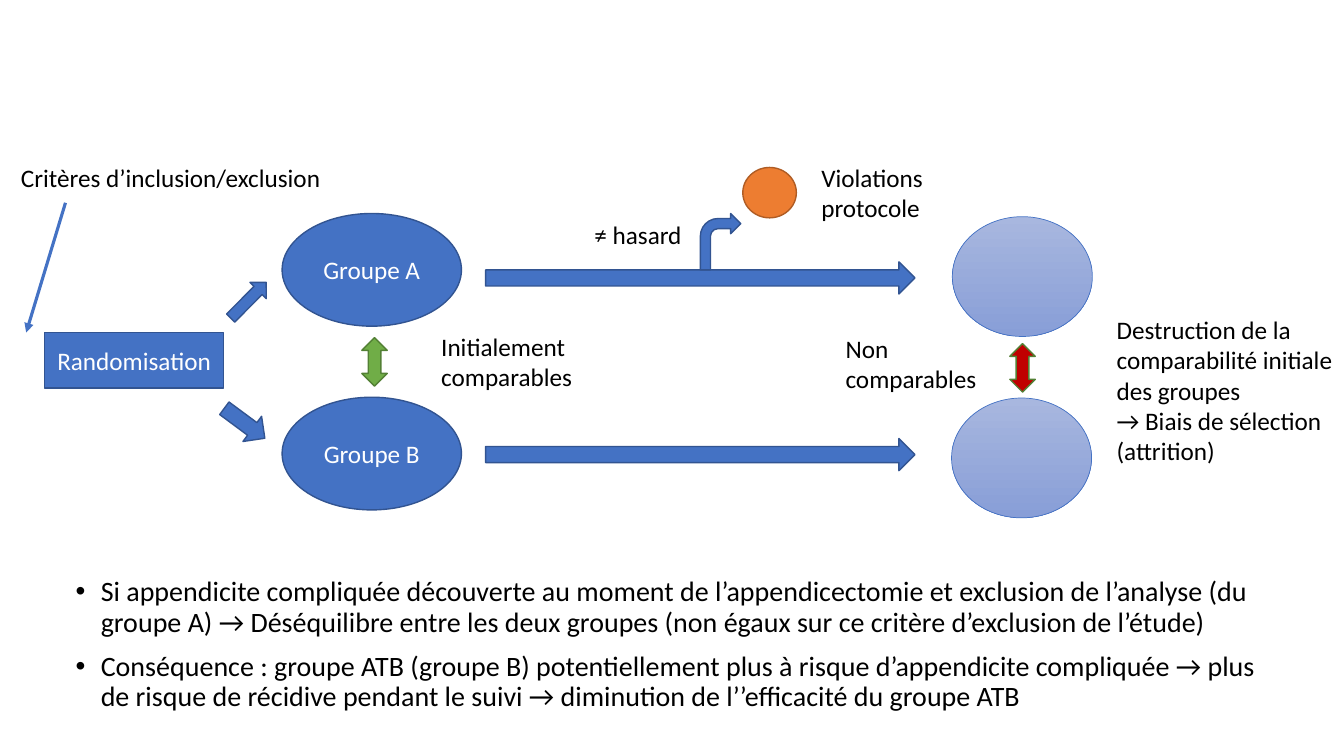
"""Build the slide on randomised groups that lose comparability through attrition."""
from dataclasses import dataclass

from lxml import etree
from pptx import Presentation
from pptx.dml.color import RGBColor
from pptx.enum.shapes import MSO_CONNECTOR, MSO_SHAPE
from pptx.enum.text import MSO_ANCHOR, MSO_AUTO_SIZE, PP_ALIGN
from pptx.oxml.ns import qn
from pptx.util import Cm, Pt

RECT, OVAL = MSO_SHAPE.RECTANGLE, MSO_SHAPE.OVAL
DOWN, RIGHT = MSO_SHAPE.DOWN_ARROW, MSO_SHAPE.RIGHT_ARROW
UP_DOWN, BENT = MSO_SHAPE.UP_DOWN_ARROW, MSO_SHAPE.BENT_ARROW
STRAIGHT = MSO_CONNECTOR.STRAIGHT
MIDDLE, CENTER, LEFT = MSO_ANCHOR.MIDDLE, PP_ALIGN.CENTER, PP_ALIGN.LEFT
NO_FIT = MSO_AUTO_SIZE.NONE


@dataclass(frozen=True)
class Theme:
    font: str = "Calibri"
    label: int = 18
    body: int = 20
    black: str = "000000"
    white: str = "FFFFFF"
    blue: str = "4472C4"
    blue_edge: str = "325491"
    green: str = "70AD47"
    green_edge: str = "538035"
    red: str = "C00000"
    orange: str = "ED7D31"
    orange_edge: str = "AF5C24"
    pale_top: str = "A8B7DF"
    pale_bottom: str = "889ED7"


T = Theme()


def write(tf, lines, size, color, align=LEFT):
    """Fill a text frame with one run per paragraph."""
    tf.word_wrap = True
    for i, line in enumerate(lines):
        p = tf.add_paragraph() if i else tf.paragraphs[0]
        p.alignment = align
        r = p.add_run()
        r.text = line
        r.font.name, r.font.size = T.font, Pt(size)
        r.font.color.rgb = RGBColor.from_string(color)


def add_block(kind, box, fill, edge, width=1):
    """Add a preset shape with a solid fill and an outline."""
    sp = s.shapes.add_shape(kind, *map(Cm, box))
    sp.shadow.inherit = False
    sp.fill.solid()
    sp.fill.fore_color.rgb = RGBColor.from_string(fill)
    sp.line.color.rgb = RGBColor.from_string(edge)
    sp.line.width = Pt(width)
    return sp


prs = Presentation()
prs.slide_width, prs.slide_height = Cm(33.87), Cm(19.05)
s = prs.slides.add_slide(prs.slide_layouts[1])
title = s.shapes.title
title.element.getparent().remove(title.element)

for kind, box, name in (
    (RECT, (1.12, 8.38, 4.52, 1.4), "Randomisation"),
    (OVAL, (7.11, 5.38, 4.52, 2.84), "Groupe A"),
    (OVAL, (7.11, 10.01, 4.52, 2.84), "Groupe B"),
):
    sp = add_block(kind, box, T.blue, T.blue_edge)
    sp.text_frame.vertical_anchor = MIDDLE
    write(sp.text_frame, [name], T.label, T.white, CENTER)

for kind, box, fill, edge, angle in (
    (DOWN, (5.97, 6.93, 0.58, 1.27), T.blue, T.blue_edge, 224.9),
    (DOWN, (5.77, 10.03, 0.79, 1.27), T.blue, T.blue_edge, 306.5),
    (UP_DOWN, (9.12, 8.51, 0.64, 1.22), T.green, T.green_edge, 0),
    (RIGHT, (12.24, 6.6, 10.82, 0.81), T.blue, T.blue_edge, 0),
    (RIGHT, (12.24, 11.05, 10.82, 0.81), T.blue, T.blue_edge, 0),
    (BENT, (17.65, 5.38, 1.02, 1.42), T.blue, T.blue_edge, 0),
    (OVAL, (18.72, 4.22, 1.35, 1.27), T.orange, T.orange_edge, 0),
    (UP_DOWN, (25.45, 8.66, 0.64, 1.22), T.red, T.green_edge, 0),
):
    add_block(kind, box, fill, edge).rotation = angle

for x, y in ((24, 5.46), (23.98, 10.03)):
    sp = add_block(OVAL, (x, y, 3.53, 3.02), T.pale_top, T.blue, 0.5)
    sp.fill.gradient()
    sp.fill.gradient_angle = 270
    for stop, color in zip(sp.fill.gradient_stops, (T.pale_top, T.pale_bottom)):
        stop.color.rgb = RGBColor.from_string(color)

for box, lines in (
    ((0.28, 3.96, 8.2, 1.02), ["Critères d’inclusion/exclusion"]),
    ((10.87, 8.23, 3.89, 1.8), ["Initialement", "comparables"]),
    ((14.73, 5.41, 2.82, 1.02), ["≠ hasard"]),
    ((20.45, 3.96, 4.5, 1.8), ["Violations protocole"]),
    ((21.06, 8.28, 3.99, 1.8), ["Non comparables"]),
    ((27.89, 7.8, 5.97, 4.11), [
        "Destruction de la comparabilité initiale des groupes",
        "→ Biais de sélection (attrition)",
    ]),
):
    write(s.shapes.add_textbox(*map(Cm, box)).text_frame, lines, T.label, T.black)

arrow = s.shapes.add_connector(STRAIGHT, Cm(1.65), Cm(5.11), Cm(0.66), Cm(8.38))
arrow.line.color.rgb = RGBColor.from_string(T.blue)
arrow.line.width = Pt(2.25)
etree.SubElement(arrow.line._get_or_add_ln(), qn("a:tailEnd"), type="triangle")
etree.SubElement(arrow.element.spPr, qn("a:effectLst"))

body = s.placeholders[1]
body.left, body.top, body.width, body.height = map(Cm, (1.65, 14.43, 30.76, 4.29))
tf = body.text_frame
write(tf, [
    "Si appendicite compliquée découverte au moment de l’appendicectomie et exclusion "
    "de l’analyse (du groupe A) → Déséquilibre entre les deux groupes (non égaux sur "
    "ce critère d’exclusion de l’étude)",
    "Conséquence : groupe ATB (groupe B) potentiellement plus à risque d’appendicite "
    "compliquée → plus de risque de récidive pendant le suivi → diminution de "
    "l’’efficacité du groupe ATB",
], T.body, T.black)
tf.auto_size = NO_FIT
for p in tf.paragraphs:
    p.line_spacing, p.space_before = 0.9, Pt(10)
    pPr = p._p.get_or_add_pPr()
    pPr.set("marL", str(Cm(0.635)))
    pPr.set("indent", str(-Cm(0.635)))
    etree.SubElement(pPr, qn("a:buFont"), typeface="Arial")
    etree.SubElement(pPr, qn("a:buChar"), char="•")

prs.save("out.pptx")
